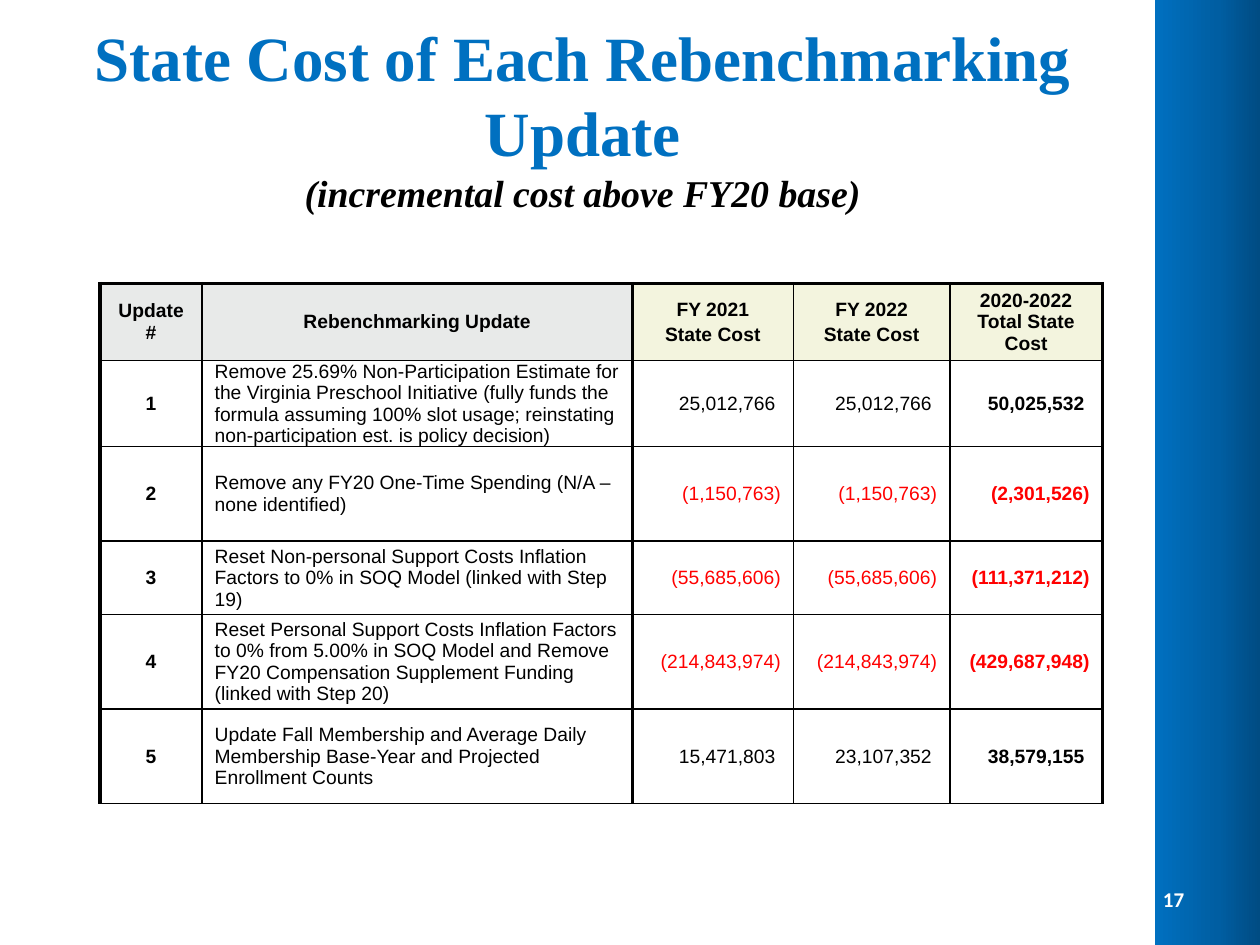
from copy import deepcopy

from lxml import etree
from pptx import Presentation
from pptx.dml.color import RGBColor
from pptx.enum.shapes import MSO_SHAPE
from pptx.enum.text import MSO_ANCHOR, PP_ALIGN
from pptx.oxml.ns import qn
from pptx.util import Pt

RECT = MSO_SHAPE.RECTANGLE
MIDDLE = MSO_ANCHOR.MIDDLE
LEFT, CENTER, RIGHT = PP_ALIGN.LEFT, PP_ALIGN.CENTER, PP_ALIGN.RIGHT

BLUE, BLACK, WHITE, RED = "0070C0", "000000", "FFFFFF", "FF0000"
GREY, CREAM = "E8EAE9", "F3F4DE"
THIN, THICK = 1, 2.25

HEADERS = ["Update #", "Rebenchmarking Update", "FY 2021\nState Cost",
           "FY 2022\nState Cost", "2020-2022 Total State Cost"]
UPDATES = [
    ("Remove 25.69% Non-Participation Estimate for the Virginia Preschool "
     "Initiative (fully funds the formula assuming 100% slot usage; "
     "reinstating non-participation est. is policy decision)",
     "25,012,766 ", "25,012,766 ", "50,025,532 "),
    ("Remove any FY20 One-Time Spending (N/A – none identified)",
     "(1,150,763)", "(1,150,763)", "(2,301,526)"),
    ("Reset Non-personal Support Costs Inflation Factors to 0% in SOQ Model "
     "(linked with Step 19)",
     "(55,685,606)", "(55,685,606)", "(111,371,212)"),
    ("Reset Personal Support Costs Inflation Factors to 0% from 5.00% in SOQ "
     "Model and Remove FY20 Compensation Supplement Funding "
     "(linked with Step 20)",
     "(214,843,974)", "(214,843,974)", "(429,687,948)"),
    ("Update Fall Membership and Average Daily Membership Base-Year and "
     "Projected Enrollment Counts",
     "15,471,803 ", "23,107,352 ", "38,579,155 "),
]
COL_WIDTHS = [58.3, 245.8, 92.2, 89.3, 87.2]
ROW_HEIGHTS = [44, 49, 54, 42, 54, 54]


def rgb(value):
    return RGBColor.from_string(value)


class SlideBuilder:
    title_font, table_font, number_font = "Times New Roman", "Arial", "Calibri"
    table_size, table_leading = 11, 12.3

    def __init__(self, prs):
        self.s = prs.slides.add_slide(prs.slide_layouts[6])

    def format_run(self, r, font, size, color, bold=False, italic=False):
        r.font.name, r.font.size = font, Pt(size)
        r.font.bold, r.font.italic = bold, italic
        r.font.color.rgb = rgb(color)

    def gradient_band(self, x, y, w, h, colors):
        sp = self.s.shapes.add_shape(RECT, Pt(x), Pt(y), Pt(w), Pt(h))
        sp.shadow.inherit = False
        sp.line.fill.background()
        sp.fill.gradient()
        sp.fill.gradient_angle = 0
        stops = sp._element.spPr.find(".//" + qn("a:gsLst"))
        stops.append(deepcopy(stops[0]))
        for i, (stop, color) in enumerate(zip(sp.fill.gradient_stops, colors)):
            stop.position = i / (len(colors) - 1)
            stop.color.rgb = rgb(color)

    def text(self, x, y, w, h, text, align, styles):
        """Add one paragraph; each run takes the next style."""
        tf = self.s.shapes.add_textbox(Pt(x), Pt(y), Pt(w), Pt(h)).text_frame
        tf.word_wrap = True
        tf.vertical_anchor = MIDDLE
        p = tf.paragraphs[0]
        p.text = text
        p.alignment = align
        for r, style in zip(p.runs, styles):
            self.format_run(r, *style)

    def borders(self, cell, left, right, top, bottom):
        tc_pr = cell._tc.get_or_add_tcPr()
        for side, width in zip("LRTB", (left, right, top, bottom)):
            ln = etree.SubElement(tc_pr, qn("a:ln" + side), w=str(Pt(width)))
            fill = etree.SubElement(ln, qn("a:solidFill"))
            etree.SubElement(fill, qn("a:srgbClr"), val=BLACK)

    def cell(self, cell, text, align, margins, color=BLACK, bold=False, fill=None):
        if fill:
            cell.fill.solid()
            cell.fill.fore_color.rgb = rgb(fill)
        else:
            cell.fill.background()
        cell.vertical_anchor = MIDDLE
        left, right, vertical = margins
        cell.margin_left, cell.margin_right = Pt(left), Pt(right)
        cell.margin_top = cell.margin_bottom = Pt(vertical)
        cell.text_frame.text = text
        for i, p in enumerate(cell.text_frame.paragraphs):
            p.alignment = align
            p.line_spacing = Pt(self.table_leading)
            if i:
                p.space_before = Pt(2.2)
            for r in p.runs:
                self.format_run(r, self.table_font, self.table_size, color, bold)

    def cost_table(self, x, y):
        rows, cols = len(ROW_HEIGHTS), len(COL_WIDTHS)
        table = self.s.shapes.add_table(
            rows, cols, Pt(x), Pt(y),
            Pt(sum(COL_WIDTHS)), Pt(sum(ROW_HEIGHTS))).table
        table.first_row = table.horz_banding = False
        for column, width in zip(table.columns, COL_WIDTHS):
            column.width = Pt(width)
        for row, height in zip(table.rows, ROW_HEIGHTS):
            row.height = Pt(height)

        # Heavy rules frame the table and split labels from costs
        heavy = {0, 2, cols}
        for r in range(rows):
            for c in range(cols):
                self.borders(table.cell(r, c),
                             THICK if c in heavy else THIN,
                             THICK if c + 1 in heavy else THIN,
                             THIN if r else THICK, THIN)

        # Header row
        for c, text in enumerate(HEADERS):
            self.cell(table.cell(0, c), text, CENTER, (7.2, 7.2, 3.5),
                      bold=True, fill=GREY if c < 2 else CREAM)

        # Updates, with negative costs in red
        for r, (label, *costs) in enumerate(UPDATES, 1):
            self.cell(table.cell(r, 0), str(r), CENTER, (0, 0, 0), bold=True)
            self.cell(table.cell(r, 1), label, LEFT, (7.2, 6, 0))
            for c, cost in enumerate(costs, 2):
                self.cell(table.cell(r, c), cost, RIGHT, (0, 7.2, 0),
                          color=RED if cost.startswith("(") else BLACK,
                          bold=c == cols - 1)


def main():
    prs = Presentation()
    prs.slide_width, prs.slide_height = Pt(720), Pt(540)
    slide = SlideBuilder(prs)

    # Side band and page number
    slide.gradient_band(660, 0, 72, 540, [BLUE, "005EA2", "004272"])
    slide.text(653.8, 499, 30, 29, "17", RIGHT,
               [(slide.number_font, 12, WHITE, True)])

    # Costs
    slide.cost_table(57.2, 162)

    # Title and subtitle
    slide.text(36, 21.6, 594, 90,
               "State Cost of Each Rebenchmarking Update\v"
               "(incremental cost above FY20 base)", CENTER,
               [(slide.title_font, 36, BLUE, True),
                (slide.title_font, 21.6, BLACK, True, True)])

    prs.save("out.pptx")


if __name__ == "__main__":
    main()
